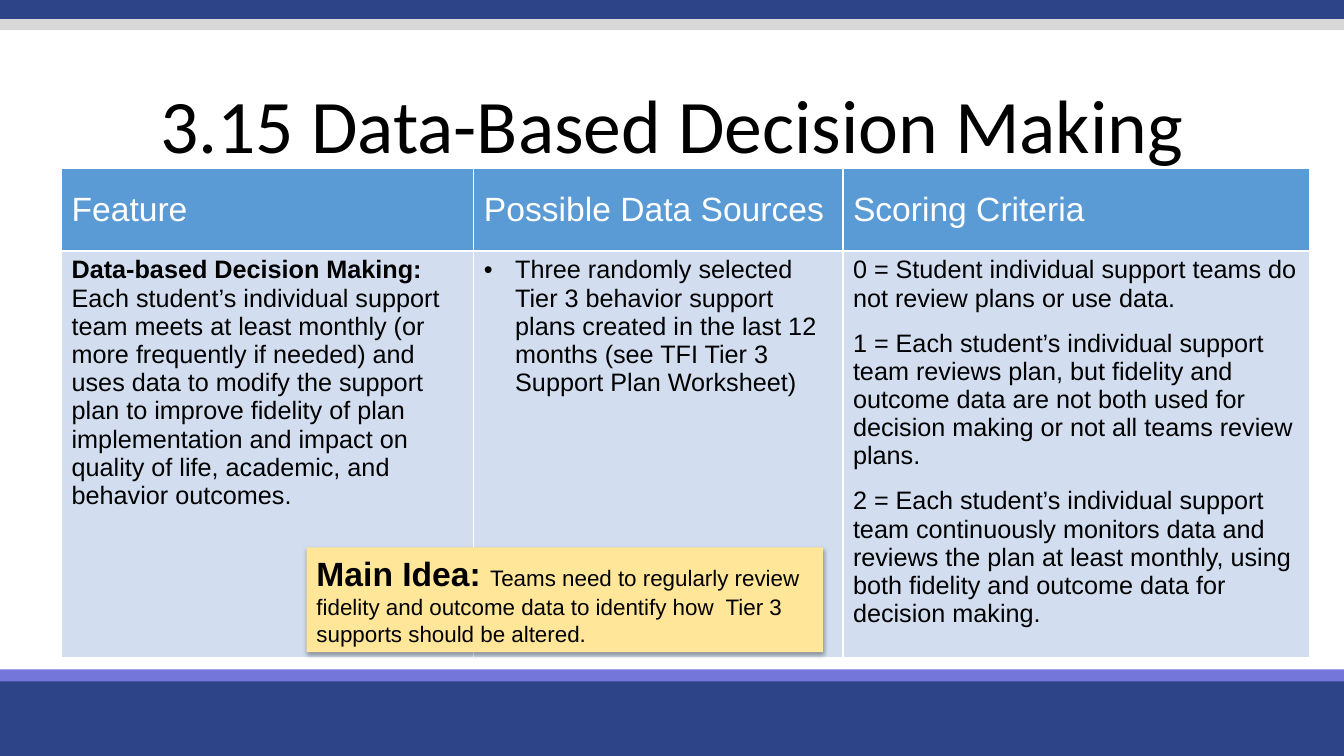
from lxml import etree
from pptx import Presentation
from pptx import util as u
from pptx.dml import color
from pptx.enum import shapes, text
from pptx.oxml import ns

COLORS = {
    "navy": "2E4488", "violet": "7476DA", "silver": "D8D8D8",
    "header": "5B9BD5", "body": "D2DEEF", "note": "FFE699",
    "white": "FFFFFF", "black": "000000",
}
TITLE = {"name": "Calibri", "size": u.Pt(54), "color": "black"}
HEADING = {"name": "Arial", "size": u.Pt(24), "color": "white"}
BODY = {"name": "Arial", "size": u.Pt(18), "color": "black"}
BODY_BOLD = {**BODY, "bold": True}
NOTE = {**BODY, "size": u.Pt(16)}
NOTE_BOLD = {**BODY_BOLD, "size": u.Pt(24)}


def child(parent, tag, **attributes):
    return etree.SubElement(parent, ns.qn(tag), {k: str(v) for k, v in attributes.items()})


class SlideBuilder:
    def __init__(self, deck):
        self.slide = deck.slides.add_slide(deck.slide_layouts[6])
        self.column = deck.slide_width / 100
        self.row = deck.slide_height / 100

    def place(self, left, top, width, height):
        return (round(left * self.column), round(top * self.row),
                round(width * self.column), round(height * self.row))

    def paint(self, fill, name):
        fill.solid()
        fill.fore_color.rgb = color.RGBColor.from_string(COLORS[name])

    def fill_text(self, frame, paragraphs, layout=None, bullet=False):
        frame.word_wrap = True
        for index, runs in enumerate(paragraphs):
            paragraph = frame.paragraphs[0] if index == 0 else frame.add_paragraph()
            if bullet:
                indent = u.Inches(0.31)
                properties = paragraph._p.get_or_add_pPr()
                properties.set("marL", str(indent))
                properties.set("indent", str(-indent))
                child(child(properties, "a:buClr"), "a:srgbClr", val=COLORS["black"])
                child(properties, "a:buFont", typeface="Arial")
                child(properties, "a:buChar", char="•")
            for key, value in (layout or {}).items():
                setattr(paragraph, key, value)
            for words, style in runs:
                run = paragraph.add_run()
                run.text = words
                for key, value in style.items():
                    if key == "color":
                        run.font.color.rgb = color.RGBColor.from_string(COLORS[value])
                    else:
                        setattr(run.font, key, value)

    def band(self, top, height, fill):
        return self.block((0, top, 100, height), fill)

    def block(self, area, fill):
        block = self.slide.shapes.add_shape(shapes.MSO_SHAPE.RECTANGLE, *self.place(*area))
        block.shadow.inherit = False
        block.line.fill.background()
        self.paint(block.fill, fill)
        return block

    def title(self, area, words):
        frame = self.slide.shapes.add_textbox(*self.place(*area)).text_frame
        frame.vertical_anchor = text.MSO_ANCHOR.MIDDLE
        self.fill_text(frame, [[(words, TITLE)]],
                       {"alignment": text.PP_ALIGN.CENTER, "line_spacing": 0.9})

    def note(self, area, runs):
        note = self.block(area, "note")
        effects = note._element.spPr.find(ns.qn("a:effectLst"))
        shadow = child(effects, "a:outerShdw", blurRad=u.Pt(3.1), dist=u.Pt(1.8),
                       dir=90 * 60000, algn="t", rotWithShape=0)
        child(child(shadow, "a:srgbClr", val=COLORS["black"]), "a:alpha", val=35000)
        note.text_frame.vertical_anchor = text.MSO_ANCHOR.MIDDLE
        self.fill_text(note.text_frame, [runs], {"alignment": text.PP_ALIGN.LEFT})

    def table(self, left, top, widths, heights, columns):
        area = self.place(left, top, sum(widths), sum(heights))
        table = self.slide.shapes.add_table(len(heights), len(widths), *area).table
        for index, width in enumerate(widths):
            table.columns[index].width = round(width * self.column)
        for index, height in enumerate(heights):
            table.rows[index].height = round(height * self.row)
        for index, (heading, paragraphs, options) in enumerate(columns):
            top_cell, body_cell = table.cell(0, index), table.cell(1, index)
            self.cell(top_cell, "header", [[(heading, HEADING)]])
            self.cell(body_cell, "body", paragraphs, **options)
            top_cell.vertical_anchor = text.MSO_ANCHOR.MIDDLE

    def cell(self, cell, fill, paragraphs, **options):
        properties = cell._tc.get_or_add_tcPr()
        for side in "LRTB":
            border = child(properties, f"a:ln{side}", w=u.Pt(1))
            child(child(border, "a:solidFill"), "a:srgbClr", val=COLORS["white"])
        self.paint(cell.fill, fill)
        self.fill_text(cell.text_frame, paragraphs, **options)


def main():
    deck = Presentation()
    deck.slide_width, deck.slide_height = u.Inches(13.33), u.Inches(7.5)
    page = SlideBuilder(deck)

    for top, height, fill in [(89.33, 10.67, "navy"), (88.53, 1.6, "violet"),
                              (0, 2.53, "navy"), (2.53, 1.47, "silver")]:
        page.band(top, height, fill)

    page.title((0, 9.2, 100, 15.73), "3.15 Data-Based Decision Making")

    feature = [
        [("Data-based Decision Making:", BODY_BOLD)],
        [("Each student’s individual support team meets at least monthly (or more "
          "frequently if needed) and uses data to modify the support plan to improve "
          "fidelity of plan implementation and impact on quality of life, academic, "
          "and behavior outcomes.", BODY)],
    ]
    sources = [[("Three randomly selected Tier 3 behavior support plans created in the "
                 "last 12 months (see TFI Tier 3 Support Plan Worksheet)", BODY)]]
    criteria = [[(f"{score} = {meaning}", BODY)] for score, meaning in enumerate([
        "Student individual support teams do not review plans or use data.",
        "Each student’s individual support team reviews plan, but fidelity and outcome "
        "data are not both used for decision making or not all teams review plans.",
        "Each student’s individual support team continuously monitors data and reviews "
        "the plan at least monthly, using both fidelity and outcome data for decision "
        "making.",
    ])]
    page.table(4.58, 22.27, [30.68, 27.46, 34.73], [10.93, 53.6], [
        ("Feature", feature, {}),
        ("Possible Data Sources", sources, {"bullet": True}),
        ("Scoring Criteria", criteria, {"layout": {"space_after": u.Pt(12)}}),
    ])

    page.note((22.81, 72.4, 38.41, 13.87), [
        ("Main Idea: ", NOTE_BOLD),
        ("Teams need to regularly review fidelity and outcome data to identify how  "
         "Tier 3 supports should be altered.", NOTE),
    ])

    deck.save("out.pptx")


if __name__ == "__main__":
    main()
